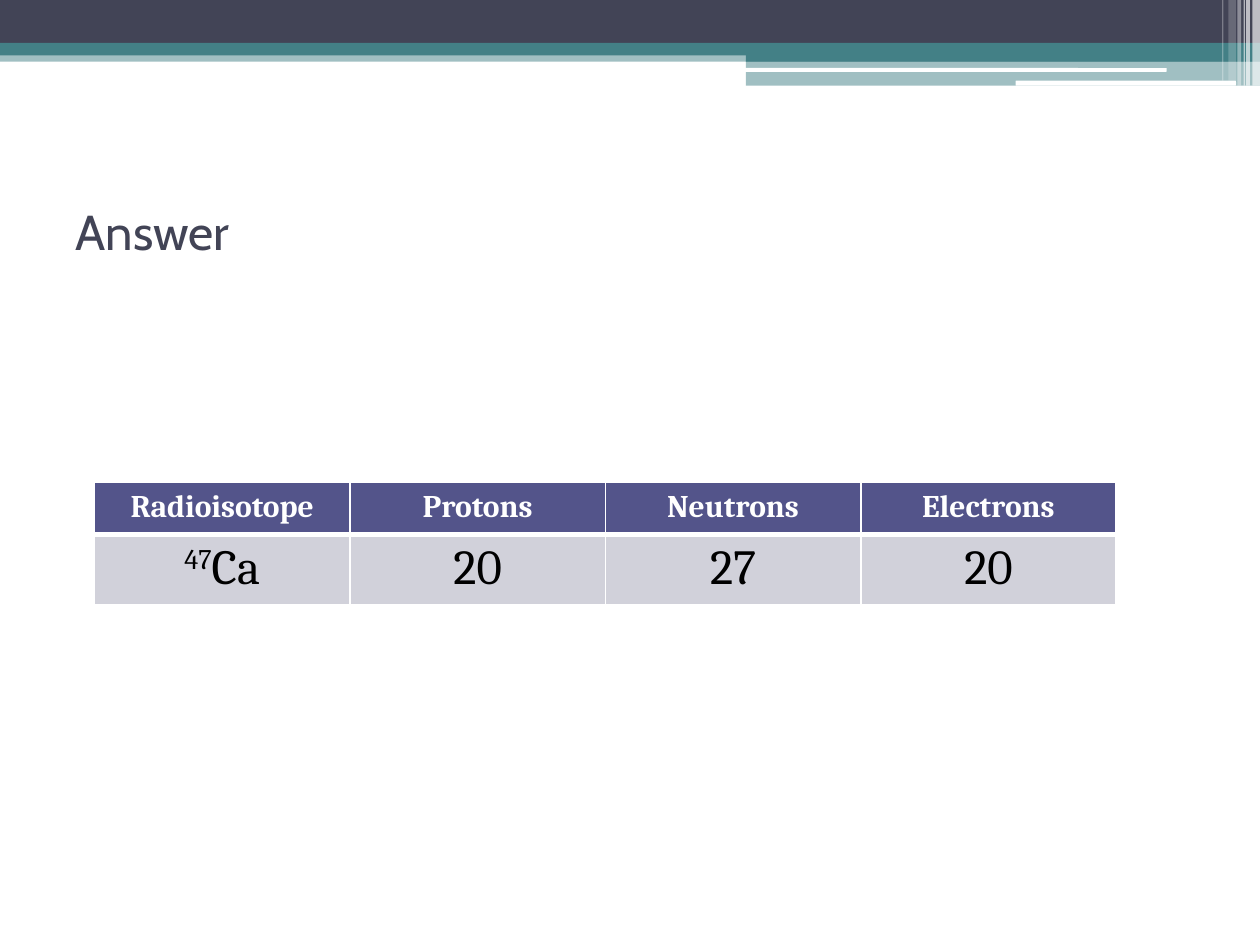
from lxml import etree
from pptx import Presentation
from pptx import util as u
from pptx.dml.color import RGBColor
from pptx.enum import shapes, text
from pptx.oxml.ns import qn

HUES = {"navy": "424456", "teal": "438086", "white": "FFFFFF",
        "head": "53548A", "body": "D1D1DA", "black": "000000"}
RECT = shapes.MSO_SHAPE.RECTANGLE
ROUND = shapes.MSO_SHAPE.ROUNDED_RECTANGLE


class Deck:
    def __init__(self):
        self.show = Presentation()
        self.show.slide_width = u.Inches(10)
        self.show.slide_height = u.Inches(7.5)
        self.slide = self.show.slides.add_slide(self.show.slide_layouts[5])

    def color(self, name):
        return RGBColor.from_string(HUES[name])

    def run(self, para, words, font, size, hue, bold=False, base=0):
        run = para.add_run()
        run.text = words
        run.font.name = font
        run.font.size = u.Pt(size)
        run.font.bold = bold
        run.font.color.rgb = self.color(hue)
        if base:
            run.font._element.set("baseline", str(base * 1000))

    def bar(self, box, hue, alpha=100, kind=RECT):
        bar = self.slide.shapes.add_shape(kind, *map(u.Inches, box))
        bar.shadow.inherit = False
        bar.line.fill.background()
        bar.fill.solid()
        bar.fill.fore_color.rgb = self.color(hue)
        if alpha < 100:
            tint = bar._element.spPr.find(qn("a:solidFill"))[0]
            etree.SubElement(tint, qn("a:alpha"), val=str(alpha * 1000))

    def title(self, box, words):
        head = self.slide.shapes.title
        head.left, head.top, head.width, head.height = map(u.Inches, box)
        frame = head.text_frame
        frame.vertical_anchor = text.MSO_ANCHOR.MIDDLE
        para = frame.paragraphs[0]
        para.alignment = text.PP_ALIGN.LEFT
        self.run(para, words, "Cabin", 28, "navy")

    def edges(self, cell, widths):
        props = cell._tc.get_or_add_tcPr()
        for spot, (side, width) in enumerate(zip("LRTB", widths)):
            line = etree.Element(qn("a:ln" + side), w=str(u.Pt(width)))
            fill = etree.SubElement(line, qn("a:solidFill"))
            etree.SubElement(fill, qn("a:srgbClr"), val=HUES["white"])
            props.insert(spot, line)

    def cell(self, cell, runs, fill, size, hue, bold, widths):
        cell.fill.solid()
        cell.fill.fore_color.rgb = self.color(fill)
        self.edges(cell, widths)
        para = cell.text_frame.paragraphs[0]
        para.alignment = text.PP_ALIGN.CENTER
        for words, base in runs:
            self.run(para, words, "Cambria", size, hue, bold, base)

    def table(self, box, rows, highs, looks):
        frame = self.slide.shapes.add_table(
            len(rows), len(rows[0]), *map(u.Inches, box))
        grid = frame.table
        for r, (row, high, look) in enumerate(zip(rows, highs, looks)):
            grid.rows[r].height = u.Inches(high)
            for c, runs in enumerate(row):
                self.cell(grid.cell(r, c), runs, *look)


def main():
    deck = Deck()
    deck.bar((0, 0.4, 10, 0.09), "teal", 50)
    deck.bar((0, 0, 10, 0.34), "navy")
    deck.bar((0, 0.34, 10, 0.1), "teal")
    deck.bar((5.92, 0.39, 4.08, 0.1), "teal")
    deck.bar((5.92, 0.48, 4.08, 0.2), "teal", 50)
    deck.bar((5.91, 0.54, 3.35, 0.03), "white", kind=ROUND)
    deck.bar((8.06, 0.64, 1.75, 0.04), "white", kind=ROUND)
    stripes = [(9.94, 0.06, 0.68, 65), (9.89, 0.03, 0.68, 65),
               (9.87, 0.01, 0.68, 60), (9.82, 0.03, 0.68, 40),
               (9.75, 0.06, 0.64, 20), (9.7, 0.01, 0.64, 30)]
    for left, wide, high, alpha in stripes:
        deck.bar((left, 0, wide, high), "white", alpha)

    deck.title((0.5, 1.25, 9, 1.17), "Answer")
    names = ["Radioisotope", "Protons", "Neutrons", "Electrons"]
    counts = ["20", "27", "20"]
    rows = [[[(name, 0)] for name in names],
            [[("47", 30), ("Ca", 0)]] + [[(count, 0)] for count in counts]]
    looks = [("head", 18, "white", True, (1, 1, 1, 3)),
             ("body", 28, "black", False, (1, 1, 3, 1))]
    deck.table((0.75, 3.83, 8.11, 0.97), rows, (0.41, 0.56), looks)
    deck.show.save("out.pptx")


if __name__ == "__main__":
    main()
